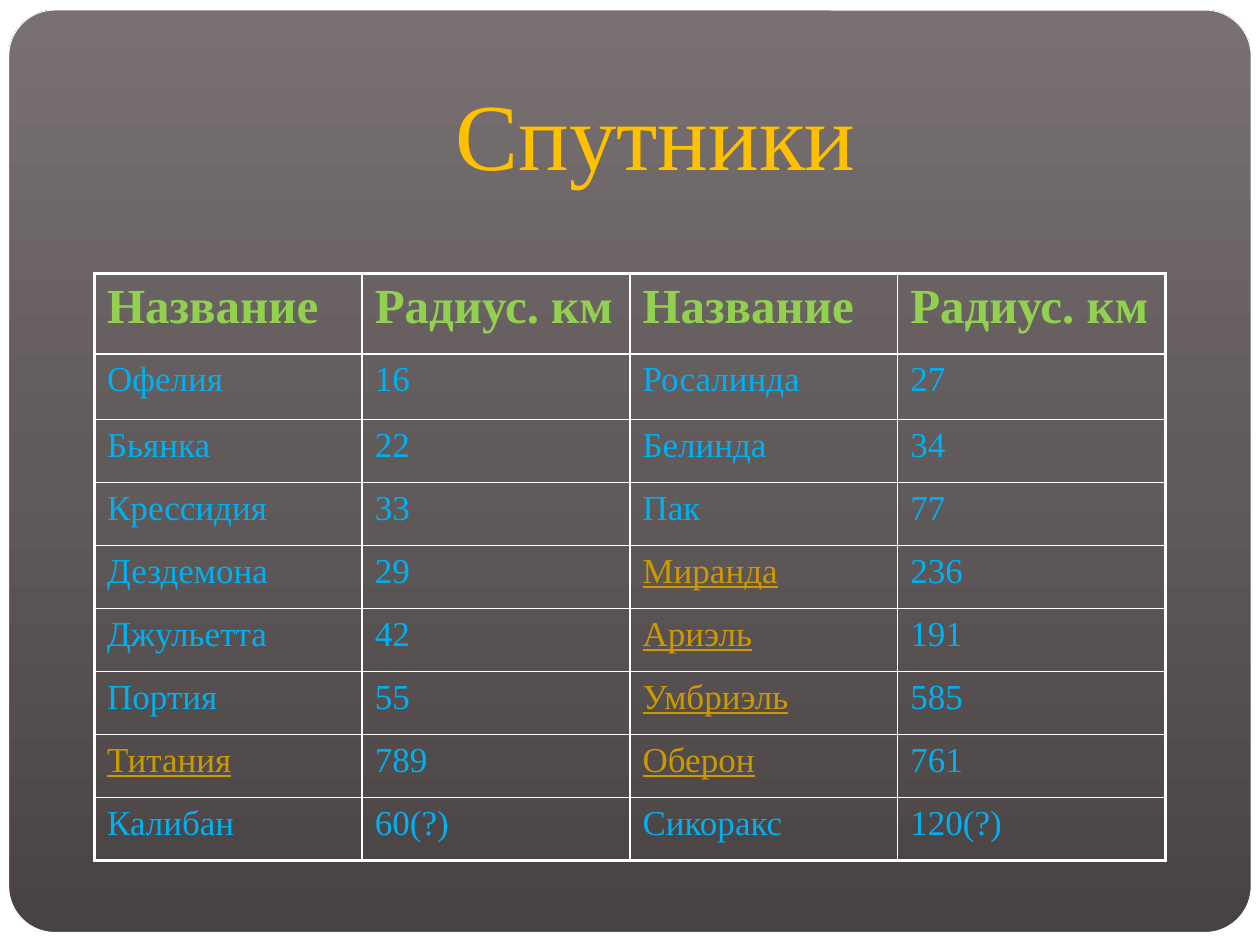
from copy import deepcopy

from pptx import Presentation
from pptx.dml.color import RGBColor
from pptx.enum.shapes import MSO_SHAPE
from pptx.enum.text import MSO_AUTO_SIZE
from pptx.oxml import parse_xml
from pptx.oxml.ns import nsdecls, qn
from pptx.util import Inches, Pt

RECT = MSO_SHAPE.RECTANGLE
ROUND = MSO_SHAPE.ROUNDED_RECTANGLE
GROW = MSO_AUTO_SIZE.SHAPE_TO_FIT_TEXT

HEX = {"dark": "484242", "mid": "615A5A", "light": "797171", "white": "FFFFFF",
       "title": "FFC000", "head": "92D050", "body": "00B0F0", "link": "CC9900"}
RGB = {name: RGBColor.from_string(code) for name, code in HEX.items()}
FACE = "Times New Roman"


def shade(fill, root):
    """Fill with three shades, dark at the bottom."""
    fill.gradient()
    fill.gradient_angle = 90
    stops = next(root.iter(qn("a:gsLst")))
    stops.insert(1, deepcopy(stops[0]))
    for stop, name, place in zip(fill.gradient_stops, ("dark", "mid", "light"), (0, 0.5, 1)):
        stop.color.rgb = RGB[name]
        stop.position = place


def style(run, color, **form):
    """Set the font of a run."""
    run.font.name = FACE
    run.font.color.rgb = RGB[color]
    for key, value in form.items():
        setattr(run.font, key, value)


deck = Presentation()
deck.slide_width, deck.slide_height = Inches(10), Inches(7.5)
slide = deck.slides.add_slide(deck.slide_layouts[6])

# Background, white sheet and rounded card
shade(slide.background.fill, slide.element)
sheet = slide.shapes.add_shape(RECT, 0, 0, deck.slide_width, deck.slide_height)
sheet.shadow.inherit = False
sheet.fill.solid()
sheet.fill.fore_color.rgb = RGB["white"]
sheet.line.fill.background()

card = slide.shapes.add_shape(ROUND, Inches(0.07), Inches(0.08), Inches(9.86), Inches(7.32))
card.shadow.inherit = False
card.adjustments[0] = 0.05
shade(card.fill, card.element)
card.line.color.rgb = RGB["white"]
card.line.width = Pt(0.5)

# Title
title = slide.shapes.add_textbox(Inches(3.52), Inches(0.55), Inches(3.58), Inches(1.01))
title.text_frame.word_wrap = False
title.text_frame.auto_size = GROW
run = title.text_frame.paragraphs[0].add_run()
run.text = "Спутники"
style(run, "title", size=Pt(54))

# Table of moons
rows = [
    ("Название", "Радиус. км", "Название", "Радиус. км"),
    ("Офелия", "16", "Росалинда", "27"),
    ("Бьянка", "22", "Белинда", "34"),
    ("Крессидия", "33", "Пак", "77"),
    ("Дездемона", "29", "Миранда", "236"),
    ("Джульетта", "42", "Ариэль", "191"),
    ("Портия", "55", "Умбриэль", "585"),
    ("Титания", "789", "Оберон", "761"),
    ("Калибан", "60(?)", "Сикоракс", "120(?)"),
]
links = {"Миранда", "Ариэль", "Умбриэль", "Титания", "Оберон"}
tall = [0.64, 0.52] + [0.5] * 7
last, end = len(rows) - 1, len(rows[0]) - 1

table = slide.shapes.add_table(len(rows), len(rows[0]), Inches(0.75), Inches(2.17),
                               Inches(8.5), Inches(sum(tall))).table
table.horz_banding = False
for col in table.columns:
    col.width = Inches(8.5 / len(rows[0]))

for i, row in enumerate(rows):
    table.rows[i].height = Inches(tall[i])
    for j, text in enumerate(row):
        cell = table.cell(i, j)
        run = cell.text_frame.paragraphs[0].add_run()
        run.text = text
        if i == 0:
            style(run, "head", size=Pt(28), bold=True)
        elif text in links:
            style(run, "link", size=Pt(20), bold=False, underline=True)
        else:
            style(run, "body", size=Pt(20), bold=False)

        # Thick outer frame, thin inner rules
        props = cell._tc.get_or_add_tcPr()
        sides = {"L": j == 0, "R": j == end, "T": i == 0, "B": i == last}
        for side, outer in sides.items():
            props.append(parse_xml(
                f'<a:ln{side} {nsdecls("a")} w="{Pt(2.25 if outer else 1)}"><a:solidFill>'
                f'<a:srgbClr val="{HEX["white"]}"/></a:solidFill></a:ln{side}>'))
        cell.fill.background()

deck.save("out.pptx")
